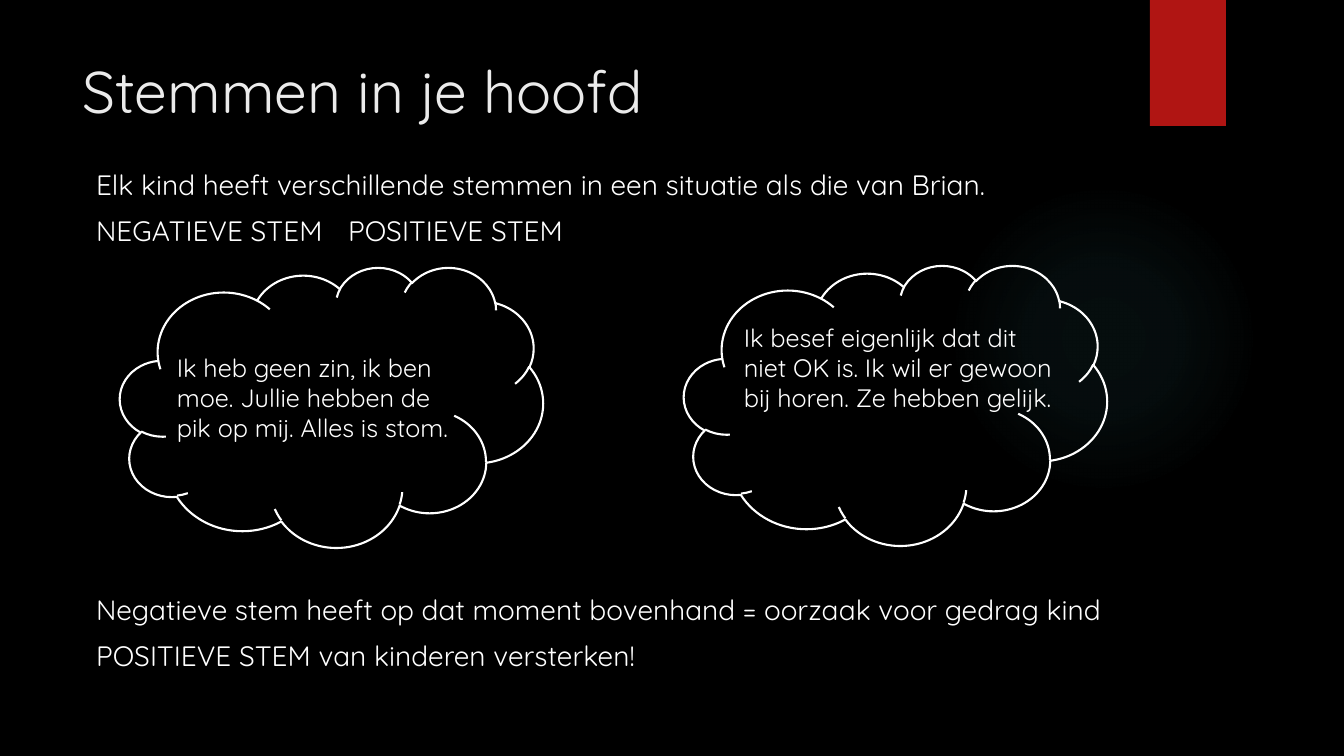
from lxml import etree
from pptx import Presentation
from pptx.dml.color import RGBColor
from pptx.enum.shapes import MSO_SHAPE
from pptx.enum.text import MSO_ANCHOR, MSO_AUTO_SIZE, PP_ALIGN
from pptx.oxml import parse_xml
from pptx.oxml.ns import nsdecls, qn
from pptx.util import Pt

RECTANGLE, OVAL, CLOUD = MSO_SHAPE.RECTANGLE, MSO_SHAPE.OVAL, MSO_SHAPE.CLOUD
TOP, LEFT, NO_FIT = MSO_ANCHOR.TOP, PP_ALIGN.LEFT, MSO_AUTO_SIZE.NONE

# Content
FONT = "Quicksand"
COLORS = {"background": "000000", "glow": "50B9C1", "ribbon": "B01513",
          "title": "EBEBEB", "text": "FFFFFF"}
TITLE = "Stemmen in je hoofd"
BODY = [  # text, points of space before
    ("Elk kind heeft verschillende stemmen in een situatie als die van Brian.", 0),
    ("NEGATIEVE STEM\tPOSITIEVE STEM", 9),
    ("Negatieve stem heeft op dat moment bovenhand = oorzaak voor gedrag kind", 247),
    ("POSITIEVE STEM van kinderen versterken!", 9),
]
VOICES = [  # cloud left and top, text box, lines
    ((120, 267), (167, 347, 302, 102),
     ["Ik heb geen zin, ik ben", "moe. Jullie hebben de", "pik op mij. Alles is stom."]),
    ((684, 265), (734, 317, 352, 102),
     ["Ik besef eigenlijk dat dit", "niet OK is. Ik wil er gewoon",
      "bij horen. Ze hebben gelijk."]),
]

# Layout in px
SLIDE_SIZE = (1344, 756)
GLOW_BOX = (949, 184, 310, 310)
RIBBON_BOX = (1150, 0, 76, 126)
TITLE_BOX = (72, 50, 1037, 154)
BODY_BOX = (86, 162, 1144, 515)
CLOUD_SIZE = (423, 280)
POSITIVE_TAB = 605
GLOW_STOPS = [(0, 7), (36, 6), (69, 0)]  # position and opacity in percent


def px(length):
    return round(length * 914400 / 100.8)


def color(name):
    return RGBColor.from_string(COLORS[name])


def place(shape, box):
    shape.left, shape.top, shape.width, shape.height = map(px, box)


def add_plain_shape(kind, box):
    shape = slide.shapes.add_shape(kind, *map(px, box))
    shape.shadow.inherit = False
    shape.fill.background()
    shape.line.fill.background()
    return shape


def style(paragraph, size, color_name):
    paragraph.alignment = LEFT
    paragraph.line_spacing = 1.0
    paragraph.font.name = FONT
    paragraph.font.size = Pt(size)
    paragraph.font.color.rgb = color(color_name)


def add_lines(frame, lines):
    for i, line in enumerate(lines):
        paragraph = frame.paragraphs[0] if i == 0 else frame.add_paragraph()
        paragraph.text = line
        yield paragraph


prs = Presentation()
prs.slide_width, prs.slide_height = map(px, SLIDE_SIZE)
slide = prs.slides.add_slide(prs.slide_layouts[1])
slide.background.fill.solid()
slide.background.fill.fore_color.rgb = color("background")

# Soft glow at the right
glow = add_plain_shape(OVAL, GLOW_BOX)
stops = "".join(
    f'<a:gs pos="{position * 1000}"><a:srgbClr val="{COLORS["glow"]}">'
    f'<a:alpha val="{opacity * 1000}"/></a:srgbClr></a:gs>'
    for position, opacity in GLOW_STOPS)
gradient = parse_xml(
    f'<a:gradFill {nsdecls("a")}><a:gsLst>{stops}</a:gsLst><a:path path="circle">'
    '<a:fillToRect l="50000" t="50000" r="50000" b="50000"/></a:path></a:gradFill>')
glow_properties = glow.element.spPr
glow_properties.replace(glow_properties.find(qn("a:noFill")), gradient)

# Red ribbon
ribbon = add_plain_shape(RECTANGLE, RIBBON_BOX)
ribbon.fill.solid()
ribbon.fill.fore_color.rgb = color("ribbon")

# Title
title = slide.shapes.title
place(title, TITLE_BOX)
title.text_frame.text = TITLE
title.text_frame.vertical_anchor = TOP
title.text_frame.auto_size = NO_FIT
style(title.text_frame.paragraphs[0], 42, "title")

# Body, with one tab stop for the second column heading
body = slide.placeholders[1]
place(body, BODY_BOX)
body.text_frame.auto_size = NO_FIT
body.text_frame.vertical_anchor = TOP
body_paragraphs = add_lines(body.text_frame, [text for text, _ in BODY])
for paragraph, (text, space_before) in zip(body_paragraphs, BODY):
    properties = paragraph._p.get_or_add_pPr()
    properties.set("marL", "0")
    properties.set("indent", "0")
    etree.SubElement(properties, qn("a:buNone"))
    if "\t" in text:
        tabs = etree.SubElement(properties, qn("a:tabLst"))
        etree.SubElement(tabs, qn("a:tab"), pos=str(px(POSITIVE_TAB)), algn="l")
    style(paragraph, 20, "text")
    paragraph.space_before = Pt(space_before)

# Thought clouds
for corner, _, _ in VOICES:
    cloud = add_plain_shape(CLOUD, corner + CLOUD_SIZE)
    cloud.line.color.rgb = color("text")
    cloud.line.width = Pt(1.5)

# Words in the clouds
for _, box, lines in VOICES:
    words = slide.shapes.add_textbox(*map(px, box))
    words.text_frame.word_wrap = False
    for paragraph in add_lines(words.text_frame, lines):
        style(paragraph, 18, "text")

prs.save("out.pptx")
